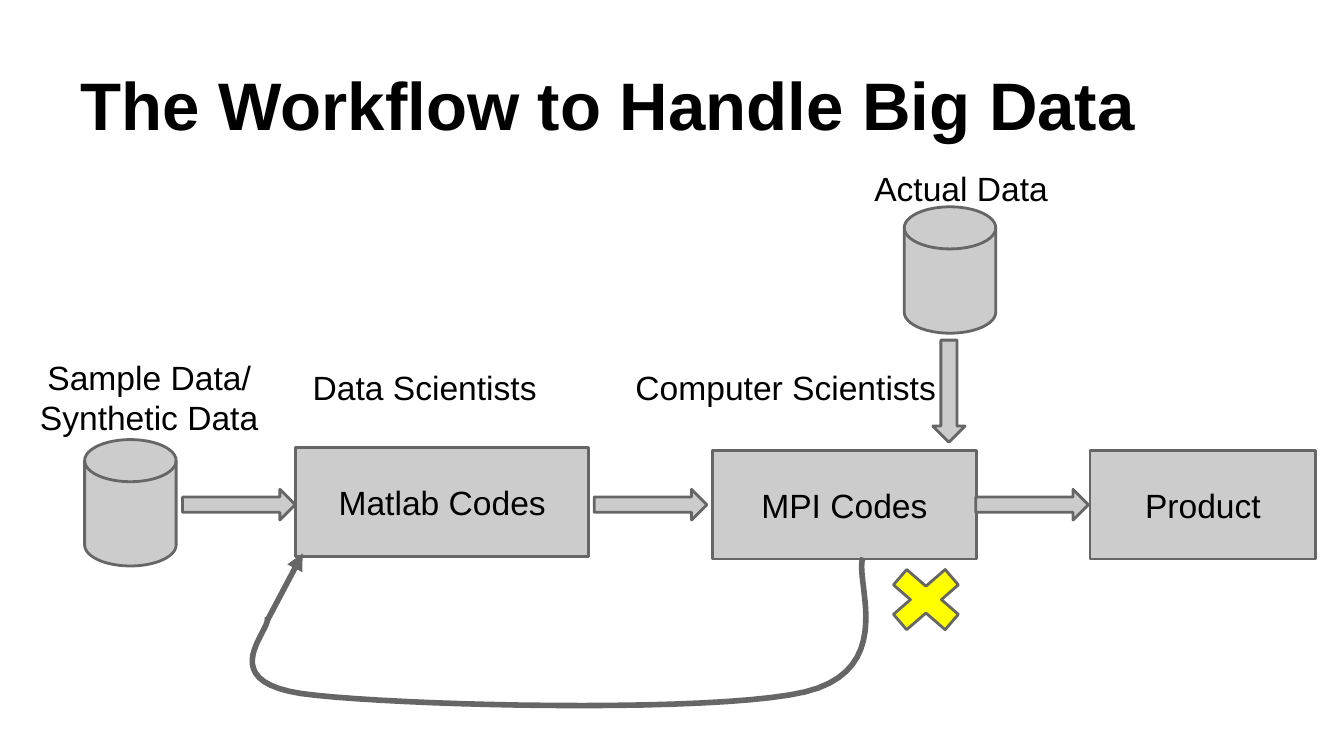
from lxml.etree import SubElement
from pptx import Presentation
from pptx.dml.color import RGBColor
from pptx.enum.shapes import MSO_CONNECTOR as Link, MSO_SHAPE as Shape
from pptx.enum.text import MSO_ANCHOR as Anchor, PP_ALIGN as Align
from pptx.oxml.ns import qn
from pptx.util import Cm, Pt

GREY, DARK, YELLOW, BLACK = "CCCCCC", "666666", "FFFF00", "000000"
CURVE_STEPS = 20


def color(hex_text):
    return RGBColor.from_string(hex_text)


def assign(target, values):
    for name, value in values.items():
        setattr(target, name, value)


def bezier(p0, p1, p2, p3, t):
    """Return the point at t on a cubic Bezier curve."""
    s = 1 - t
    return tuple(
        s**3 * a + 3 * s * s * t * b + 3 * s * t * t * c + t**3 * d
        for a, b, c, d in zip(p0, p1, p2, p3)
    )


class WorkflowSlide:
    """Holds the style and the current slide; lengths are in centimetres."""

    font = {"name": "Arial", "size": Pt(18), "bold": False}
    frame = {
        "word_wrap": True,
        "margin_left": Cm(0.25),
        "margin_right": Cm(0.25),
        "margin_top": Cm(0.25),
        "margin_bottom": Cm(0.25),
    }

    def __init__(self, deck):
        self.shapes = deck.slides.add_slide(deck.slide_layouts[6]).shapes

    def set_text(self, box, text, align, anchor, **font):
        assign(box.text_frame, {**self.frame, "vertical_anchor": anchor})
        para = box.text_frame.paragraphs[0]
        para.alignment = align
        span = para.add_run()
        span.text = text
        assign(span.font, {**self.font, **font})
        span.font.color.rgb = color(BLACK)

    def outline(self, item, width):
        item.line.color.rgb = color(DARK)
        item.line.width = Pt(width)

    def label(self, text, area, align=Align.LEFT, anchor=Anchor.TOP, **font):
        box = self.shapes.add_textbox(*map(Cm, area))
        self.set_text(box, text, align, anchor, **font)

    def block(self, kind, area, fill=GREY, text=None):
        box = self.shapes.add_shape(kind, *map(Cm, area))
        box.shadow.inherit = False
        box.fill.solid()
        box.fill.fore_color.rgb = color(fill)
        self.outline(box, 1.5)
        if text:
            self.set_text(box, text, Align.CENTER, Anchor.MIDDLE)
        return box

    def curve(self, start, segments):
        """Draw an open line through cubic segments of three points each."""
        points, origin = [], start
        for segment in segments:
            points += [
                bezier(origin, *segment, step / CURVE_STEPS)
                for step in range(1, CURVE_STEPS + 1)
            ]
            origin = segment[-1]
        builder = self.shapes.build_freeform(*map(Cm, start))
        builder.add_line_segments([tuple(map(Cm, p)) for p in points], close=False)
        loop = builder.convert_to_shape()
        loop.shadow.inherit = False
        loop.fill.background()
        self.outline(loop, 3)

    def arrow(self, start, end):
        link = self.shapes.add_connector(Link.STRAIGHT, *map(Cm, start + end))
        self.outline(link, 3)
        properties = link._element.spPr
        SubElement(properties.find(qn("a:ln")), qn("a:tailEnd"), type="triangle")
        SubElement(properties, qn("a:effectLst"))


def main():
    deck = Presentation()
    assign(deck, {"slide_width": Cm(25.4), "slide_height": Cm(14.29)})
    slide = WorkflowSlide(deck)

    slide.label("The Workflow to Handle Big Data", (1.27, 0.58, 22.86, 2.39),
                anchor=Anchor.BOTTOM, size=Pt(36), bold=True)

    for text, left, top, width in (
        ("Matlab Codes", 5.59, 8.46, 5.54),
        ("MPI Codes", 13.46, 8.51, 5),
        ("Product", 20.6, 8.51, 4.27),
    ):
        slide.block(Shape.RECTANGLE, (left, top, width, 2.06), text=text)

    for left, top in ((1.6, 8.31), (17.09, 3.91)):
        slide.block(Shape.FLOWCHART_MAGNETIC_DISK, (left, top, 1.73, 2.39))

    for left in (3.45, 11.23, 18.44):
        slide.block(Shape.RIGHT_ARROW, (left, 9.25, 2.13, 0.58))
    slide.block(Shape.DOWN_ARROW, (17.63, 6.43, 0.61, 1.93))

    cross = slide.block(Shape.MATH_MULTIPLY, (16.56, 10.52, 1.88, 1.63), YELLOW)
    cross.adjustments[0] = 0.235

    slide.curve((16.31, 10.54), (
        ((16.13, 10.95), (16.99, 12.65), (15.21, 13.08)),
        ((13.46, 13.49), (7.39, 13.34), (5.69, 13.11)),
        ((4.01, 12.85), (5.16, 11.89), (5.05, 11.66)),
    ))
    slide.arrow((5.05, 11.73), (5.72, 10.46))

    slide.label("Sample Data/ Synthetic Data", (0.05, 6.5, 5.54, 1.63), Align.CENTER)
    slide.label("Actual Data", (16.03, 2.92, 4.27, 1.63), Align.CENTER)
    slide.label("Data Scientists", (5.66, 6.68, 5.38, 1.3))
    slide.label("Computer Scientists", (11.76, 6.68, 6.48, 1.42))

    deck.save("out.pptx")


if __name__ == "__main__":
    main()
